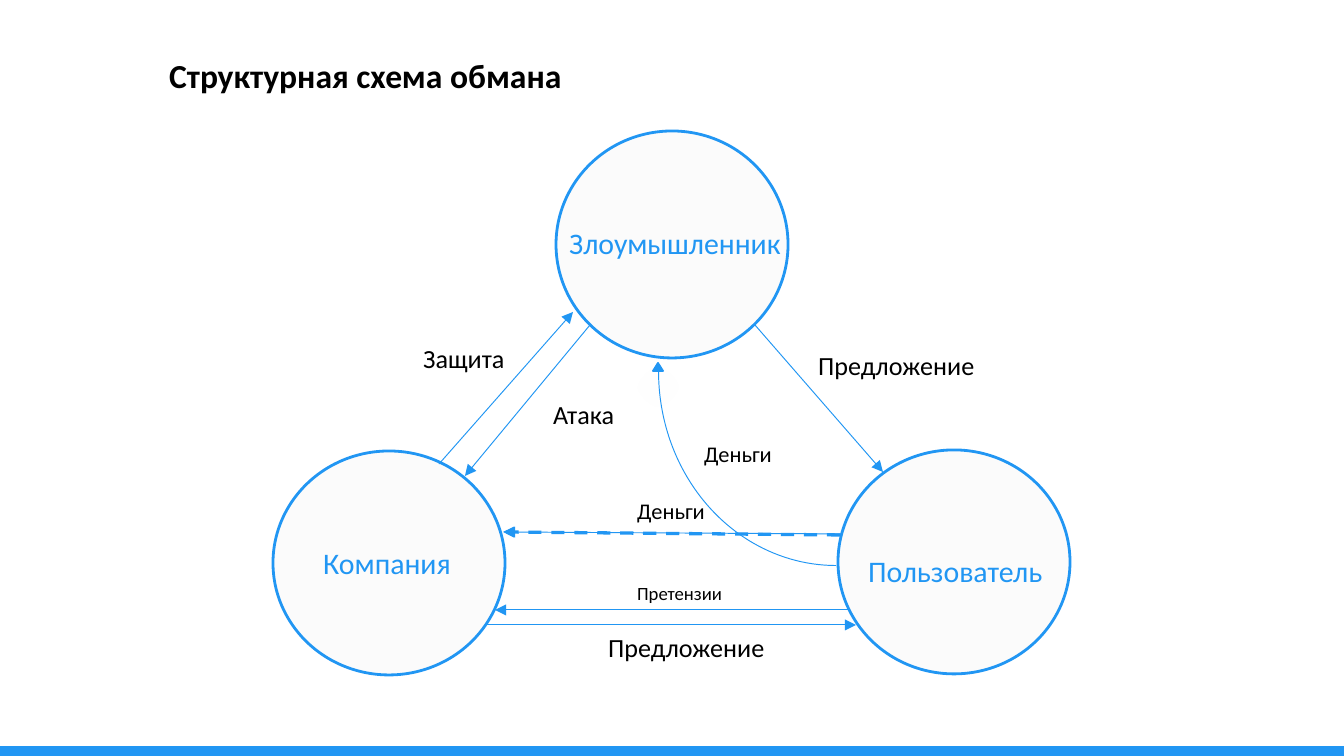
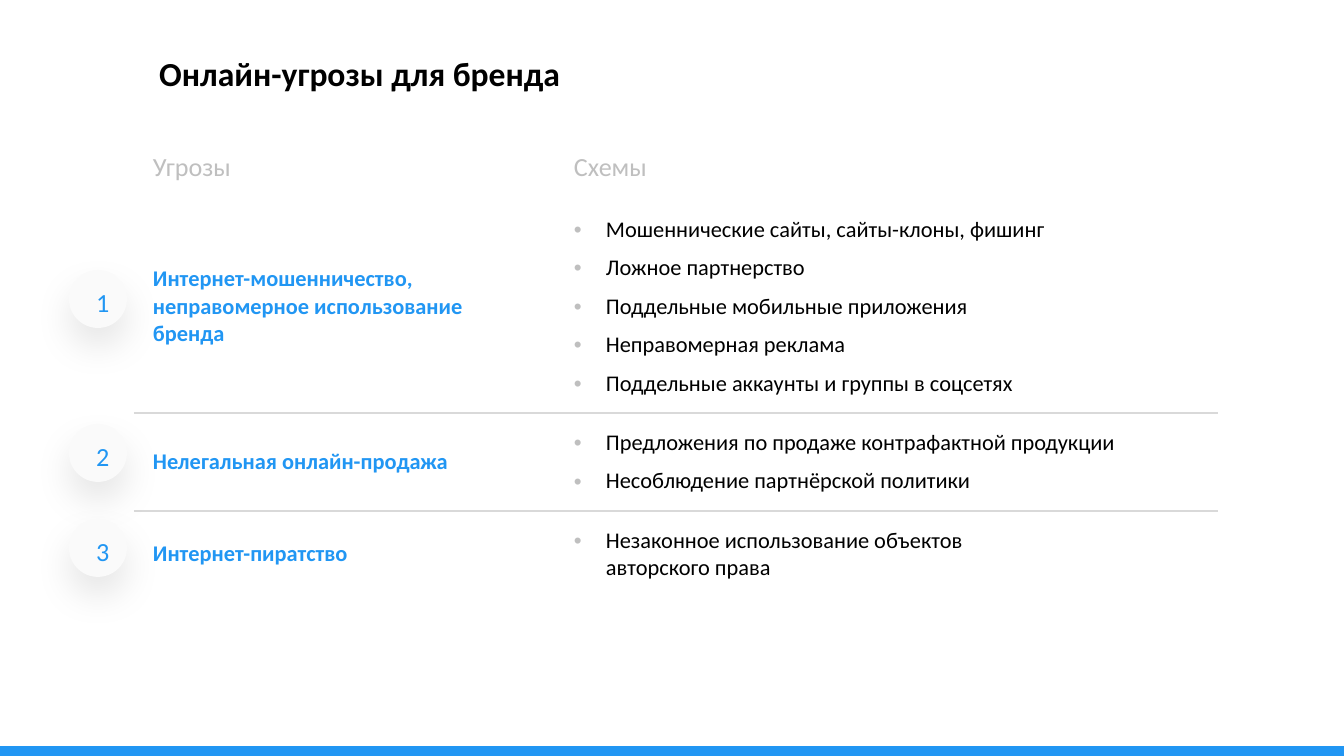
from lxml import etree
from pptx import Presentation
from pptx.dml.color import RGBColor
from pptx.enum.dml import MSO_LINE
from pptx.enum.shapes import MSO_CONNECTOR, MSO_SHAPE
from pptx.enum.text import MSO_ANCHOR, MSO_AUTO_SIZE
from pptx.oxml import parse_xml
from pptx.oxml.ns import nsdecls, qn
from pptx.util import Emu, Pt

OVAL, RECT = MSO_SHAPE.OVAL, MSO_SHAPE.RECTANGLE
TRIANGLE, ARC = MSO_SHAPE.ISOSCELES_TRIANGLE, MSO_SHAPE.ARC
STRAIGHT, DASH = MSO_CONNECTOR.STRAIGHT, MSO_LINE.DASH
TOP, MIDDLE, BOTTOM = MSO_ANCHOR.TOP, MSO_ANCHOR.MIDDLE, MSO_ANCHOR.BOTTOM
FIT = MSO_AUTO_SIZE.SHAPE_TO_FIT_TEXT

FONT = "Calibri"
NO_STYLE = "{2D5ABB26-0587-4C30-8999-92F81FD0307C}"
COLORS = {"blue": "2196F3", "black": "000000", "gray": "BFBFBF",
          "rule": "D9D9D9", "circle": "FBFBFB", "badge": "FAFAFA"}

# Slide 1: the scheme
SCHEME_TITLE = ("Структурная схема обмана", 156, 40)
CIRCLES = [(273, 451, 232, 224), (838, 450, 232, 224), (556, 131, 232, 227)]
BACK_ARROW = (841, 534, 503, 532)
ARROWS = [(487, 625, 856, 625), (590, 325, 465, 476), (439, 464, 573, 312),
          (755, 325, 883, 472), (848, 610, 495, 610)]
DASHED_ARROW = (840, 535, 504, 532)
MONEY_ARC = (642, 194, 388, 355)
MONEY_TIP = (653, 363, 10, 8)
ROLES = [("Компания", (310, 538, 179, 50)),
         ("Злоумышленник", (556, 218, 250, 50)),
         ("Пользователь", (855, 546, 208, 50))]
LABELS = [("Предложение", (595, 625, 210, 46), 14),
          ("Атака", (540, 392, 89, 46), 14),
          ("Защита", (410, 336, 109, 46), 14),
          ("Предложение", (805, 343, 185, 46), 14),
          ("Деньги", (624, 491, 95, 40), 12),
          ("Деньги", (691, 434, 95, 40), 12),
          ("Претензии", (624, 575, 113, 36), 10)]

# Slide 2: the table of threats
THREATS_TITLE = ("Онлайн-угрозы для бренда", 146, 38)
HEADERS = ["Угрозы", "Схемы"]
THREATS = [
    ("Интернет-мошенничество, неправомерное использование бренда",
     ["Мошеннические сайты, сайты-клоны, фишинг", "Ложное партнерство",
      "Поддельные мобильные приложения", "Неправомерная реклама",
      "Поддельные аккаунты и группы в соцсетях"]),
    ("Нелегальная онлайн-продажа",
     ["Предложения по продаже контрафактной продукции",
      "Несоблюдение партнёрской политики"]),
    ("Интернет-пиратство",
     ["Незаконное использование объектов \nавторского права"]),
]
TABLE_AT = (134, 136)
COL_WIDTHS = [421, 663]
ROW_HEIGHTS = [63, 188, 91, 86]
BADGE_TOPS = [270, 424, 519]
BADGE_LEFT, BADGE_SIZE = 69, 58
INDENT = 32


def px(n):
    return Emu(round(n * 914400 / 134.4))


def rgb(name):
    return RGBColor.from_string(COLORS[name])


def write(p, text, size, color, bold=False):
    p.text = text
    for r in p.runs:
        for key, value in {"name": FONT, "size": Pt(size), "bold": bold}.items():
            setattr(r.font, key, value)
        r.font.color.rgb = rgb(color)
    for br in p._p.findall(qn("a:br")):
        etree.SubElement(br, qn("a:rPr")).set("sz", str(size * 100))


def add_text(slide, text, box, size, color="black", bold=False, wrap=False):
    tf = slide.shapes.add_textbox(*map(px, box)).text_frame
    tf.word_wrap, tf.auto_size = wrap, FIT
    write(tf.paragraphs[0], text, size, color, bold)
    return tf


def add_shape(slide, kind, box, fill=None, line=None, width=1.5, shadow=False):
    sp = slide.shapes.add_shape(kind, *map(px, box))
    sp.shadow.inherit = False
    if fill:
        sp.fill.solid()
        sp.fill.fore_color.rgb = rgb(fill)
    else:
        sp.fill.background()
    if line:
        sp.line.color.rgb = rgb(line)
        sp.line.width = Pt(width)
    else:
        sp.line.fill.background()
    if shadow:
        effects = sp._element.spPr.find(qn("a:effectLst"))
        effects.append(parse_xml(
            f'<a:outerShdw {nsdecls("a")} blurRad="{Pt(20)}" dist="{Pt(10)}" '
            f'dir="5400000" algn="t" rotWithShape="0"><a:srgbClr val="{COLORS["black"]}">'
            '<a:alpha val="10000"/></a:srgbClr></a:outerShdw>'))
    return sp


def add_arrow(slide, ends, width=0.5, dash=None):
    c = slide.shapes.add_connector(STRAIGHT, *map(px, ends))
    c.line.color.rgb = rgb("blue")
    c.line.width = Pt(width)
    if dash:
        c.line.dash_style = dash
    etree.SubElement(c.line._get_or_add_ln(), qn("a:tailEnd")).set("type", "triangle")
    etree.SubElement(c._element.spPr, qn("a:effectLst"))


def add_slide(prs, title, x, y):
    slide = prs.slides.add_slide(prs.slide_layouts[6])
    add_shape(slide, RECT, (0, 746, 1344, 10), "blue")
    tf = add_text(slide, title, (x, y, 867, 75), 18, bold=True, wrap=True)
    tf.auto_size = MSO_AUTO_SIZE.NONE
    tf.vertical_anchor = MIDDLE
    tf.paragraphs[0].line_spacing = 0.9
    return slide


def add_bullet(p):
    pPr = p._p.get_or_add_pPr()
    pPr.set("marL", str(px(INDENT)))
    pPr.set("indent", str(px(-INDENT)))
    color = etree.SubElement(pPr, qn("a:buClr"))
    etree.SubElement(color, qn("a:srgbClr")).set("val", COLORS["gray"])
    etree.SubElement(pPr, qn("a:buFont")).set("typeface", "Arial")
    etree.SubElement(pPr, qn("a:buChar")).set("char", "•")


def format_cell(cell, anchor, sides):
    margins = {"margin_left": 19, "margin_right": 19,
               "margin_top": 16, "margin_bottom": 16}
    for key, value in margins.items():
        setattr(cell, key, px(value))
    cell.vertical_anchor = anchor
    cell.fill.background()
    for i, side in enumerate(sides):
        cell._tc.get_or_add_tcPr().insert(i, parse_xml(
            f'<a:ln{side} {nsdecls("a")} w="{Pt(1)}"><a:solidFill>'
            f'<a:srgbClr val="{COLORS["rule"]}"/></a:solidFill></a:ln{side}>'))


def build_scheme(prs):
    slide = add_slide(prs, *SCHEME_TITLE)
    add_arrow(slide, BACK_ARROW)
    for box in CIRCLES:
        add_shape(slide, OVAL, box, "circle", "blue")
    for ends in ARROWS:
        add_arrow(slide, ends)
    add_arrow(slide, DASHED_ARROW, 1.75, DASH)

    # Curved arrow from the user to the attacker
    add_shape(slide, TRIANGLE, MONEY_TIP, "blue", "blue", 1, shadow=True)
    arc = add_shape(slide, ARC, MONEY_ARC, line="blue", width=0.5)
    arc.adjustments[0], arc.adjustments[1] = 161.65, 0
    arc.rotation = 270
    arc._element.spPr.get_or_add_xfrm().set("flipH", "1")

    for text, box in ROLES:
        add_text(slide, text, box, 16, "blue", wrap=True)
    for text, box, size in LABELS:
        add_text(slide, text, box, size)


def build_threats(prs):
    slide = add_slide(prs, *THREATS_TITLE)
    size = (sum(COL_WIDTHS), sum(ROW_HEIGHTS))
    table = slide.shapes.add_table(len(ROW_HEIGHTS), len(COL_WIDTHS),
                                   *map(px, TABLE_AT + size)).table
    table.first_row = table.horz_banding = False
    table._tbl.tblPr.find(qn("a:tableStyleId")).text = NO_STYLE
    for col, width in zip(table.columns, COL_WIDTHS):
        col.width = px(width)
    for row, height in zip(table.rows, ROW_HEIGHTS):
        row.height = px(height)

    for c, text in enumerate(HEADERS):
        cell = table.cell(0, c)
        format_cell(cell, BOTTOM, [])
        write(cell.text_frame.paragraphs[0], text, 14, "gray")

    for i, (threat, schemes) in enumerate(THREATS, 1):
        sides = (["T"] if i > 1 else []) + (["B"] if i < len(THREATS) else [])
        name, details = table.cell(i, 0), table.cell(i, 1)
        format_cell(name, MIDDLE, sides)
        format_cell(details, TOP, sides)
        write(name.text_frame.paragraphs[0], threat, 12, "blue", True)
        tf = details.text_frame
        for j, scheme in enumerate(schemes):
            p = tf.add_paragraph() if j else tf.paragraphs[0]
            add_bullet(p)
            if j:
                p.space_before = Pt(6)
            write(p, scheme, 12, "black")

    # Numbered badges beside the rows
    for n, top in enumerate(BADGE_TOPS, 1):
        add_shape(slide, OVAL, (BADGE_LEFT, top, BADGE_SIZE, BADGE_SIZE),
                  "badge", shadow=True)
        add_text(slide, str(n), (BADGE_LEFT + 14, top + 10, 40, 46), 14, "blue")


def main():
    prs = Presentation()
    prs.slide_width, prs.slide_height = px(1344), px(756)
    build_scheme(prs)
    build_threats(prs)
    prs.save("out.pptx")


if __name__ == "__main__":
    main()
